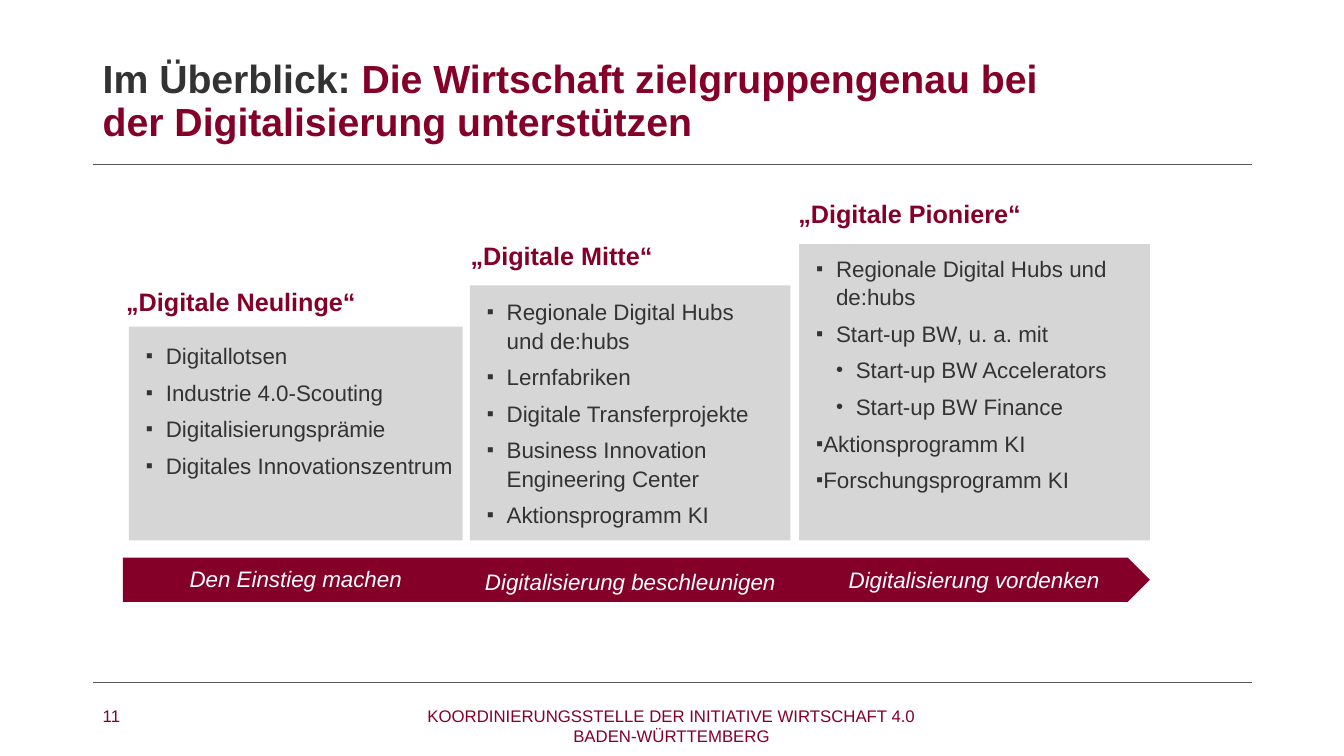
from lxml import etree
from pptx import Presentation
from pptx import util as u
from pptx.dml.color import RGBColor
from pptx.enum import shapes, text
from pptx.oxml import ns

COLORS = {"wine": "840029", "ink": "333333", "panel": "D6D6D6",
          "rule": "58595B", "white": "FFFFFF"}
FONT = "Arial"
TITLE = [[("Im Überblick: ", "ink"), ("Die Wirtschaft zielgruppengenau bei ", "wine")],
         [("der Digitalisierung unterstützen", "wine")]]
FOOTER = "KOORDINIERUNGSSTELLE DER INITIATIVE WIRTSCHAFT 4.0 BADEN-WÜRTTEMBERG"
PAGE_NUMBER = "11"
BULLETS = {"main": ("▪", 0, 0.5, -0.5), "sub": ("•", 1, 1, -0.5),
           "tight": ("▪", 0, 0.03, -0.79)}
STAGES = [
    {"heading": "„Digitale Neulinge“", "heading_box": (3.18, 7.19, 8.56, 0.79),
     "left": 3.25, "width": 8.41, "list_box": (8.59, 9.27, 4.19),
     "caption": "Den Einstieg machen", "caption_box": (3.25, 14.12, 8.41, 0.79),
     "caption_style": {"anchor": "BOTTOM", "inset": False},
     "items": [("Digitallotsen", "main"), ("Industrie 4.0-Scouting", "main"),
               ("Digitalisierungsprämie", "main"),
               ("Digitales Innovationszentrum", "main")]},
    {"heading": "„Digitale Mitte“", "heading_box": (11.86, 6.07, 8.26, 0.76),
     "left": 11.84, "width": 8.08, "list_box": (7.49, 7.06, 5.69),
     "caption": "Digitalisierung beschleunigen",
     "caption_box": (11.86, 14.15, 8.05, 0.94), "caption_style": {},
     "items": [("Regionale Digital Hubs und de:hubs", "main"),
               ("Lernfabriken", "main"), ("Digitale Transferprojekte", "main"),
               ("Business Innovation Engineering Center", "main"),
               ("Aktionsprogramm KI", "main")]},
    {"heading": "„Digitale Pioniere“", "heading_box": (20.12, 5.05, 7.67, 0.71),
     "left": 20.14, "width": 8.84, "list_box": (6.4, 8.2, 5.69),
     "caption": "Digitalisierung vordenken",
     "caption_box": (20.12, 14.12, 8.86, 0.94), "caption_style": {},
     "items": [("Regionale Digital Hubs und de:hubs", "main"),
               ("Start-up BW, u. a. mit", "main"),
               ("Start-up BW Accelerators", "sub"), ("Start-up BW Finance", "sub"),
               ("Aktionsprogramm KI", "tight"), ("Forschungsprogramm KI", "tight")]},
]
PANEL_BOTTOM, FIRST_PANEL_TOP, STEP = 13.62, 8.23, 1.04
LIST_INDENT = 0.43
RULE_LEFT, RULE_RIGHT = 2.34, 31.55
RULE_HEIGHTS = (4.14, 17.2)


def color(name):
    return RGBColor.from_string(COLORS[name])


def lengths(box):
    return [u.Cm(value) for value in box]


def add_frame(slide, box, anchor="TOP", inset=True):
    frame = slide.shapes.add_textbox(*lengths(box)).text_frame
    frame.word_wrap = True
    frame.vertical_anchor = getattr(text.MSO_ANCHOR, anchor)
    if not inset:
        frame.margin_left = frame.margin_right = 0
        frame.margin_top = frame.margin_bottom = 0
    return frame


def add_run(paragraph, words, size, tone, bold=False, italic=False):
    run = paragraph.add_run()
    run.text = words
    run.font.name, run.font.size = FONT, u.Pt(size)
    run.font.bold, run.font.italic = bold, italic
    run.font.color.rgb = color(tone)


def add_label(slide, box, words, size, tone, align="LEFT", spacing=1.0,
              anchor="TOP", inset=True, **style):
    paragraph = add_frame(slide, box, anchor, inset).paragraphs[0]
    paragraph.alignment = getattr(text.PP_ALIGN, align)
    paragraph.line_spacing = spacing
    add_run(paragraph, words, size, tone, **style)


def add_shape(slide, kind, box, tone):
    shape = slide.shapes.add_shape(kind, *lengths(box))
    shape.shadow.inherit = False
    shape.fill.solid()
    shape.fill.fore_color.rgb = color(tone)
    shape.line.fill.background()


def add_rule(slide, height):
    rule = slide.shapes.add_connector(
        shapes.MSO_CONNECTOR.STRAIGHT,
        *lengths((RULE_LEFT, height, RULE_RIGHT, height)))
    rule.line.color.rgb = color("rule")
    rule.line.width = u.Pt(0.5)
    etree.SubElement(rule._element.spPr, ns.qn("a:effectLst"))


def set_bullet(paragraph, kind):
    symbol, level, margin, indent = BULLETS[kind]
    paragraph.level = level
    properties = paragraph._p.get_or_add_pPr()
    properties.set("marL", str(u.Cm(margin)))
    properties.set("indent", str(u.Cm(indent)))
    tone = etree.SubElement(properties, ns.qn("a:buClr"))
    etree.SubElement(tone, ns.qn("a:srgbClr"), val=COLORS["ink"])
    etree.SubElement(properties, ns.qn("a:buSzPct"), val="90000")
    etree.SubElement(properties, ns.qn("a:buFont"), typeface=FONT)
    etree.SubElement(properties, ns.qn("a:buChar"), char=symbol)


def add_list(slide, box, items):
    frame = add_frame(slide, box, inset=False)
    for index, (words, kind) in enumerate(items):
        paragraph = frame.add_paragraph() if index else frame.paragraphs[0]
        set_bullet(paragraph, kind)
        paragraph.line_spacing = 1.05
        paragraph.space_after = u.Pt(6)
        add_run(paragraph, words, 16, "ink")


def add_title(slide):
    paragraph = add_frame(slide, (2.34, 1.02, 29.21, 3.12), "MIDDLE").paragraphs[0]
    paragraph.line_spacing = 0.9
    for index, line in enumerate(TITLE):
        if index:
            paragraph.add_line_break()
        for words, tone in line:
            add_run(paragraph, words, 28, tone, bold=True)


def main():
    presentation = Presentation()
    presentation.slide_width, presentation.slide_height = u.Cm(33.87), u.Cm(19.05)
    slide = presentation.slides.add_slide(presentation.slide_layouts[6])

    for height in RULE_HEIGHTS:
        add_rule(slide, height)
    add_title(slide)
    add_shape(slide, shapes.MSO_SHAPE.PENTAGON, (3.1, 14.05, 25.88, 1.12), "wine")

    for index, stage in enumerate(STAGES):
        top = FIRST_PANEL_TOP - index * STEP
        left = stage["left"]
        add_shape(slide, shapes.MSO_SHAPE.RECTANGLE,
                  (left, top, stage["width"], PANEL_BOTTOM - top), "panel")
        add_list(slide, (left + LIST_INDENT, *stage["list_box"]), stage["items"])
        add_label(slide, stage["heading_box"], stage["heading"], 18, "wine",
                  spacing=1.05, anchor="BOTTOM", inset=False, bold=True)
        add_label(slide, stage["caption_box"], stage["caption"], 16, "white",
                  align="CENTER", spacing=1.05, italic=True, **stage["caption_style"])

    add_label(slide, (10.46, 17.65, 12.93, 1.02), FOOTER, 12, "wine", align="CENTER")
    add_label(slide, (2.34, 17.65, 1.93, 1.02), PAGE_NUMBER, 12, "wine")
    presentation.save("out.pptx")


if __name__ == "__main__":
    main()
